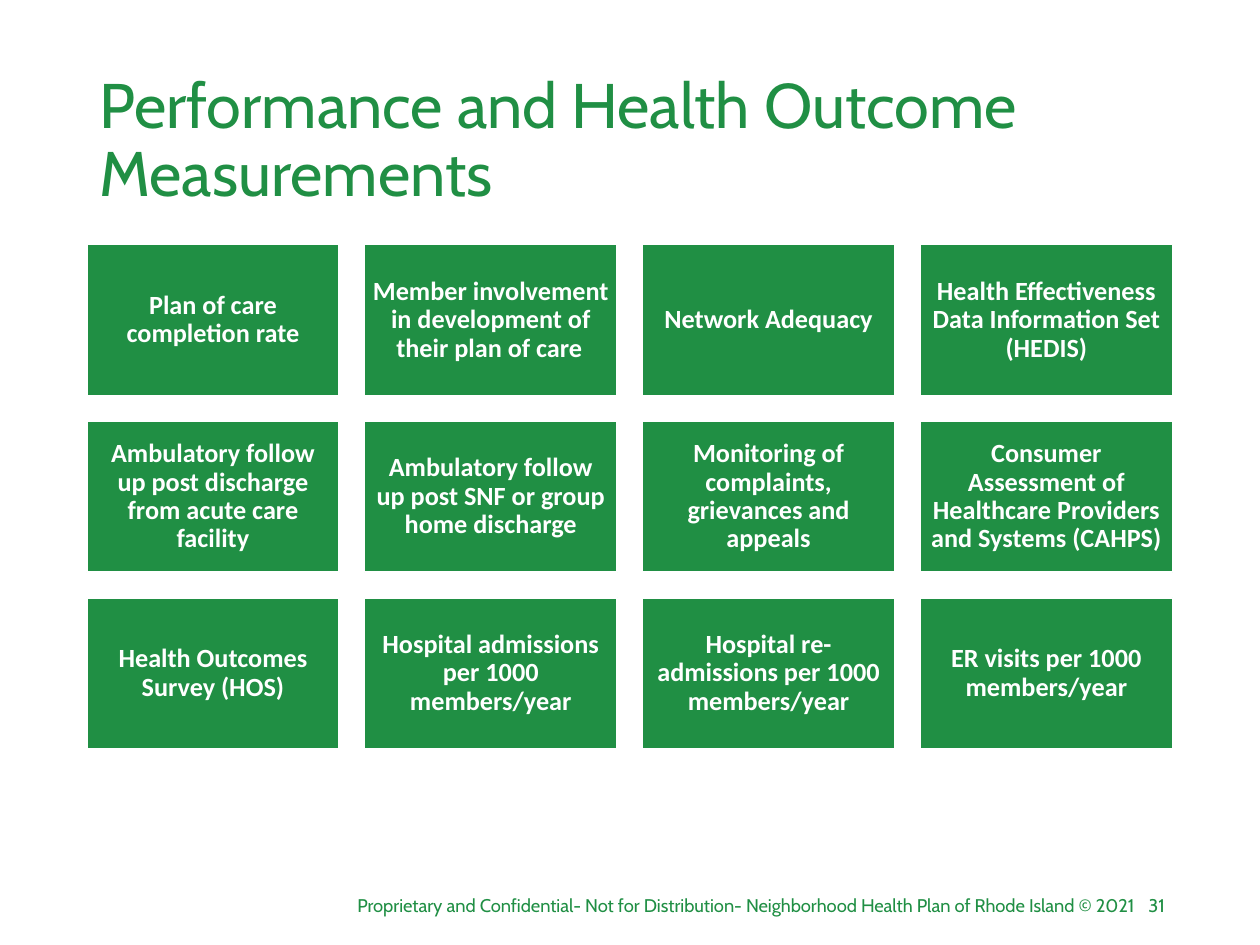
from pptx import Presentation
from pptx.dml.color import RGBColor
from pptx.enum.shapes import MSO_SHAPE
from pptx.enum.text import MSO_ANCHOR, PP_ALIGN
from pptx.util import Cm, Pt

GREEN = RGBColor(0x20, 0x8F, 0x44)
WHITE = RGBColor(0xFF, 0xFF, 0xFF)

GOALS = [
    ["Plan of care completion rate",
     "Member involvement in development of their plan of care\t",
     "Network Adequacy",
     "Health Effectiveness Data Information Set (HEDIS)"],
    ["Ambulatory follow up post discharge from acute care facility",
     "Ambulatory follow up post SNF or group home discharge",
     "Monitoring of complaints, grievances and appeals",
     "Consumer Assessment of Healthcare Providers and Systems (CAHPS)"],
    ["Health Outcomes Survey (HOS)",
     "Hospital admissions per 1000 members/year",
     "Hospital re-admissions per 1000 members/year",
     "ER visits per 1000 members/year"],
]


def write(frame, text, size, font="Cabin", color=GREEN, bold=False,
          align=PP_ALIGN.LEFT, anchor=MSO_ANCHOR.TOP, lead=1.0, pad=None):
    frame.word_wrap = True
    frame.vertical_anchor = anchor
    if pad is not None:
        frame.margin_left = frame.margin_right = pad
        frame.margin_top = frame.margin_bottom = pad
    line = frame.paragraphs[0]
    line.alignment = align
    line.line_spacing = lead
    run = line.add_run()
    run.text = text
    run.font.name = font
    run.font.size = Pt(size)
    run.font.bold = bold
    run.font.color.rgb = color


class Deck:
    def __init__(self):
        self.show = Presentation()
        self.show.slide_width = Cm(25.4)
        self.show.slide_height = Cm(19.05)
        self.slide = self.show.slides.add_slide(self.show.slide_layouts[6])

    def label(self, text, left, top, width, height, **style):
        box = self.slide.shapes.add_textbox(
            Cm(left), Cm(top), Cm(width), Cm(height))
        write(box.text_frame, text, **style)

    def tile(self, text, left, top, width, height):
        box = self.slide.shapes.add_shape(
            MSO_SHAPE.RECTANGLE, Cm(left), Cm(top), Cm(width), Cm(height))
        box.shadow.inherit = False
        box.fill.solid()
        box.fill.fore_color.rgb = GREEN
        box.line.color.rgb = WHITE
        box.line.width = Pt(1)
        write(box.text_frame, text, 15, font="Calibri", color=WHITE, bold=True,
              align=PP_ALIGN.CENTER, anchor=MSO_ANCHOR.MIDDLE, lead=0.9,
              pad=Cm(0.15))

    def grid(self, rows, left, top, width, height, gap):
        for i, row in enumerate(rows):
            for j, text in enumerate(row):
                self.tile(text, left + j * (width + gap),
                          top + i * (height + gap), width, height)

    def save(self):
        self.show.save("out.pptx")


def main():
    deck = Deck()
    deck.label("Performance and Health Outcome Measurements",
               1.75, 1.02, 21.9, 3.68, size=36, lead=0.9,
               anchor=MSO_ANCHOR.MIDDLE)
    deck.grid(GOALS, left=1.75, top=4.93, width=5.09, height=3.05, gap=0.51)
    deck.label("Proprietary and Confidential- Not for Distribution- "
               "Neighborhood Health Plan of Rhode Island © 2021",
               6.35, 17.91, 16.79, 0.71, size=10.5, align=PP_ALIGN.RIGHT)
    deck.label("31", 22.56, 17.91, 1.17, 0.71, size=10.5,
               align=PP_ALIGN.RIGHT)
    deck.save()


if __name__ == "__main__":
    main()
